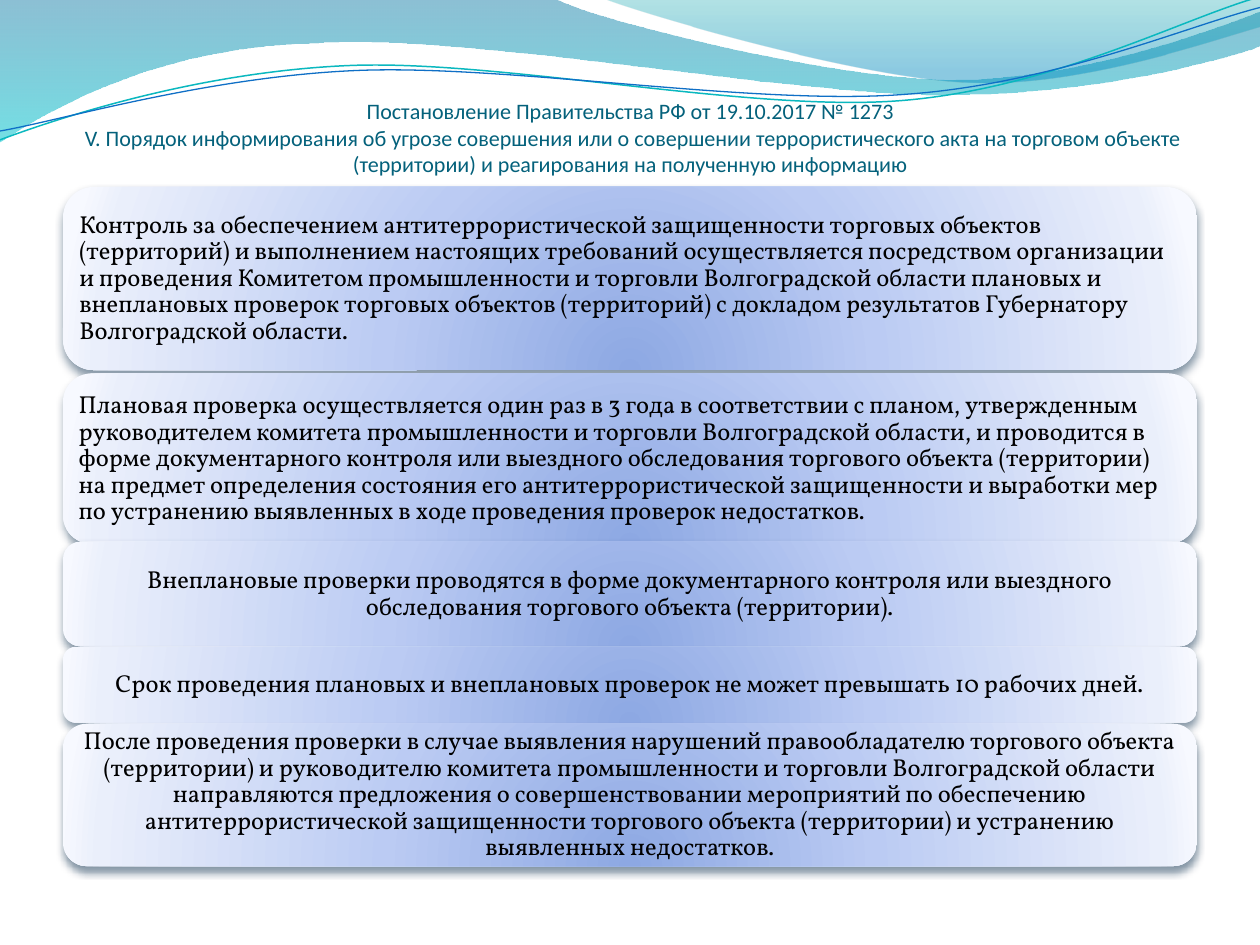
import math
from dataclasses import dataclass

from lxml import etree
from pptx import Presentation
from pptx.dml.color import RGBColor
from pptx.enum import shapes, text
from pptx.oxml import ns
from pptx.util import Cm, Pt

COLORS = {
    "title": "04617B", "body": "000000", "shadow": "042747",
    "teal_line": "0AB8BF", "blue_line": "0F6FC6",
}
CARD_STOPS = ((0, "8DA8E3", 100), (43, "BBCBF3", 100),
              (93, "EAEFFB", 100), (100, "F7F9FF", 100))
CARD_FOCUS = {"l": 50, "t": 130, "r": 50, "b": -30}
LEFT, WIDTH = Cm(1.27), Cm(22.86)
GRID = Cm(2.54)  # wave points are given in tenths of the slide width
TILT = 2.7  # degrees anticlockwise
CORNER = (1 - math.sqrt(0.5)) / 6  # room a rounded corner takes, per height


@dataclass
class Wave:
    """Segments are (x, y) for a line or (x1, y1, x2, y2, x, y) for a curve."""
    start: tuple
    segments: list
    stops: tuple = ()
    line: str = ""
    weight: float = 0
    center: tuple = ()


@dataclass
class Card:
    top: float
    height: float
    text: str
    align: text.PP_ALIGN = text.PP_ALIGN.CENTER


WAVES = [
    Wave((0, 0), [
        (4.4, -0.01), (4.76, 0.17, 6.64, 0.63, 7.58, 0.63),
        (8.53, 0.63, 9.58, 0.26, 10, 0.09), (10.01, 0.36),
        (9.83, 0.44, 8.7, 0.76, 7.46, 0.75),
        (6.22, 0.75, 3.82, 0.28, 2.57, 0.34),
        (1.29, 0.36, 0.46, 0.83, -0.01, 1.13), (0, 0),
    ], stops=((0, "0074A1", 45), (100, "00C6CF", 55))),
    Wave((4.79, -0.01), [
        (5.09, 0.11, 6.82, 0.62, 7.69, 0.65),
        (8.56, 0.69, 9.61, 0.32, 10, 0.21), (10, 0), (4.79, -0.01),
    ], stops=((0, "00A1A9", 30), (80, "008BBF", 45))),
    Wave((0, 1.11), [
        (0.48, 0.93, 1.58, 0.57, 2.77, 0.52),
        (3.95, 0.47, 5.93, 0.89, 7.13, 0.8),
        (8.33, 0.71, 9.38, 0.15, 9.98, -0.02),
    ], line="teal_line", weight=0.85, center=(4.99, 0.58)),
    Wave((0, 1.04), [
        (0.47, 0.96, 1.64, 0.61, 2.83, 0.56),
        (4.03, 0.51, 5.97, 0.84, 7.17, 0.75),
        (8.36, 0.67, 9.41, 0.21, 10, 0.06),
    ], line="blue_line", weight=0.75, center=(5, 0.59)),
]

TITLE = (
    "Постановление Правительства РФ от 19.10.2017 № 1273\v"
    " V. Порядок информирования об угрозе совершения или о совершении "
    "террористического акта на торговом объекте (территории) и реагирования "
    "на полученную информацию"
)

CARDS = [
    Card(3.77, 3.69,
         "Контроль за обеспечением антитеррористической защищенности торговых "
         "объектов (территорий) и выполнением настоящих требований "
         "осуществляется посредством организации и проведения Комитетом "
         "промышленности и торговли Волгоградской области плановых и "
         "внеплановых проверок торговых объектов (территорий) с докладом "
         "результатов Губернатору Волгоградской области.",
         text.PP_ALIGN.LEFT),
    Card(7.53, 3.43,
         "Плановая проверка осуществляется один раз в 3 года в соответствии с "
         "планом, утвержденным руководителем комитета промышленности и "
         "торговли Волгоградской области, и проводится в форме документарного "
         "контроля или выездного обследования торгового объекта (территории) "
         "на предмет определения состояния его антитеррористической "
         "защищенности и выработки мер по устранению выявленных в ходе "
         "проведения проверок недостатков.",
         text.PP_ALIGN.LEFT),
    Card(10.92, 2.11,
         "Внеплановые проверки проводятся в форме документарного контроля или "
         "выездного обследования торгового объекта (территории)."),
    Card(13.04, 1.53,
         "Срок проведения плановых и внеплановых проверок не может превышать "
         "10 рабочих дней."),
    Card(14.59, 2.87,
         "После проведения проверки в случае выявления нарушений "
         "правообладателю торгового объекта (территории) и руководителю "
         "комитета промышленности и торговли Волгоградской области "
         "направляются предложения о совершенствовании мероприятий по "
         "обеспечению антитеррористической защищенности торгового объекта "
         "(территории) и устранению выявленных недостатков."),
]


def rgb(name: str) -> RGBColor:
    return RGBColor.from_string(COLORS[name])


def add_node(parent, tag: str, **attrs):
    node = etree.SubElement(parent, ns.qn(tag))
    for key, value in attrs.items():
        node.set(key, str(value))
    return node


def add_color(parent, color: str, opacity: int) -> None:
    node = add_node(parent, "a:srgbClr", val=color)
    add_node(node, "a:alpha", val=opacity * 1000)


def fill_gradient(sp, stops: tuple, focus: dict | None = None) -> None:
    """Fill downwards, or in circles around the focus if one is given."""
    sp.fill.gradient()
    grad = sp.element.spPr.find(ns.qn("a:gradFill"))
    for child in list(grad):
        grad.remove(child)
    stop_list = add_node(grad, "a:gsLst")
    for position, color, opacity in stops:
        add_color(add_node(stop_list, "a:gs", pos=position * 1000), color, opacity)
    if focus:
        circle = add_node(grad, "a:path", path="circle")
        add_node(circle, "a:fillToRect", **{k: v * 1000 for k, v in focus.items()})
    else:
        add_node(grad, "a:lin", ang=90 * 60000, scaled=0)


def level(point: tuple, center: tuple) -> tuple:
    """Turn a point back by the tilt that the shape's rotation adds."""
    angle = math.radians(TILT)
    dx, dy = point[0] - center[0], point[1] - center[1]
    return (center[0] + dx * math.cos(angle) - dy * math.sin(angle),
            center[1] + dx * math.sin(angle) + dy * math.cos(angle))


def bend_segments(sp, segments: list) -> None:
    """Join each three lines that stand for a curve into one cubic segment."""
    lines = iter(list(sp.element.iter(ns.qn("a:lnTo"))))
    for segment in segments:
        line = next(lines)
        if len(segment) == 6:
            curve = etree.Element(ns.qn("a:cubicBezTo"))
            line.addprevious(curve)
            for part in (line, next(lines), next(lines)):
                curve.append(part[0])
                part.getparent().remove(part)


def draw_wave(slide, wave: Wave) -> None:
    points = [wave.start]
    for segment in wave.segments:
        points += zip(segment[::2], segment[1::2])
    if wave.center:
        points = [level(point, wave.center) for point in points]
    points = [(x * GRID, y * GRID) for x, y in points]
    builder = slide.shapes.build_freeform(*points[0])
    builder.add_line_segments(points[1:], close=False)
    sp = builder.convert_to_shape()
    bend_segments(sp, wave.segments)
    sp.shadow.inherit = False
    if wave.stops:
        fill_gradient(sp, wave.stops)
        sp.line.fill.background()
    else:
        sp.rotation = 360 - TILT
        sp.fill.background()
        sp.line.color.rgb = rgb(wave.line)
        sp.line.width = Pt(wave.weight)


def write_text(sp, content: str, color: str, frame: dict, para: dict, font: dict) -> None:
    tf = sp.text_frame
    tf.text = content
    p = tf.paragraphs[0]
    for target, values in ((tf, frame), (p, para)):
        for key, value in values.items():
            setattr(target, key, value)
    for r in p.runs:
        for key, value in font.items():
            setattr(r.font, key, value)
        r.font.color.rgb = rgb(color)


def draw_title(slide) -> None:
    sp = slide.shapes.title
    sp.left, sp.top, sp.width, sp.height = LEFT, Cm(1.94), WIDTH, Cm(1.63)
    frame = dict(word_wrap=True, auto_size=text.MSO_AUTO_SIZE.NONE,
                 vertical_anchor=text.MSO_ANCHOR.BOTTOM, margin_left=0,
                 margin_right=0, margin_top=Cm(0.13), margin_bottom=0)
    write_text(sp, TITLE, "title", frame, dict(alignment=text.PP_ALIGN.CENTER),
               dict(name="Calibri", size=Pt(12.6)))
    sp.element.getparent().append(sp.element)  # in front of the waves


def draw_card(slide, card: Card) -> None:
    top, height = Cm(card.top), Cm(card.height)
    sp = slide.shapes.add_shape(shapes.MSO_SHAPE.ROUNDED_RECTANGLE,
                                LEFT, top, WIDTH, height)
    fill_gradient(sp, CARD_STOPS, CARD_FOCUS)
    sp.line.fill.background()
    sp.shadow.inherit = False
    effects = sp.element.spPr.find(ns.qn("a:effectLst"))
    shadow = add_node(effects, "a:outerShdw", blurRad=Pt(4.5), dist=Pt(3),
                      dir=90 * 60000, rotWithShape=0)
    add_color(shadow, COLORS["shadow"], 48)
    inset = round(CORNER * height)
    box = slide.shapes.add_textbox(LEFT + inset, top + inset,
                                   WIDTH - 2 * inset, height - 2 * inset)
    frame = dict(word_wrap=True, vertical_anchor=text.MSO_ANCHOR.MIDDLE)
    frame |= {f"margin_{side}": Cm(0.15) for side in ("left", "top", "right", "bottom")}
    write_text(box, card.text, "body", frame,
               dict(alignment=card.align, line_spacing=0.9),
               dict(name="Vollkorn", size=Pt(14)))


def main() -> None:
    prs = Presentation()
    prs.slide_width, prs.slide_height = Cm(25.4), Cm(19.05)
    slide = prs.slides.add_slide(prs.slide_layouts.get_by_name("Title Only"))
    for wave in WAVES:
        draw_wave(slide, wave)
    draw_title(slide)
    for card in CARDS:
        draw_card(slide, card)
    prs.save("out.pptx")


if __name__ == "__main__":
    main()
